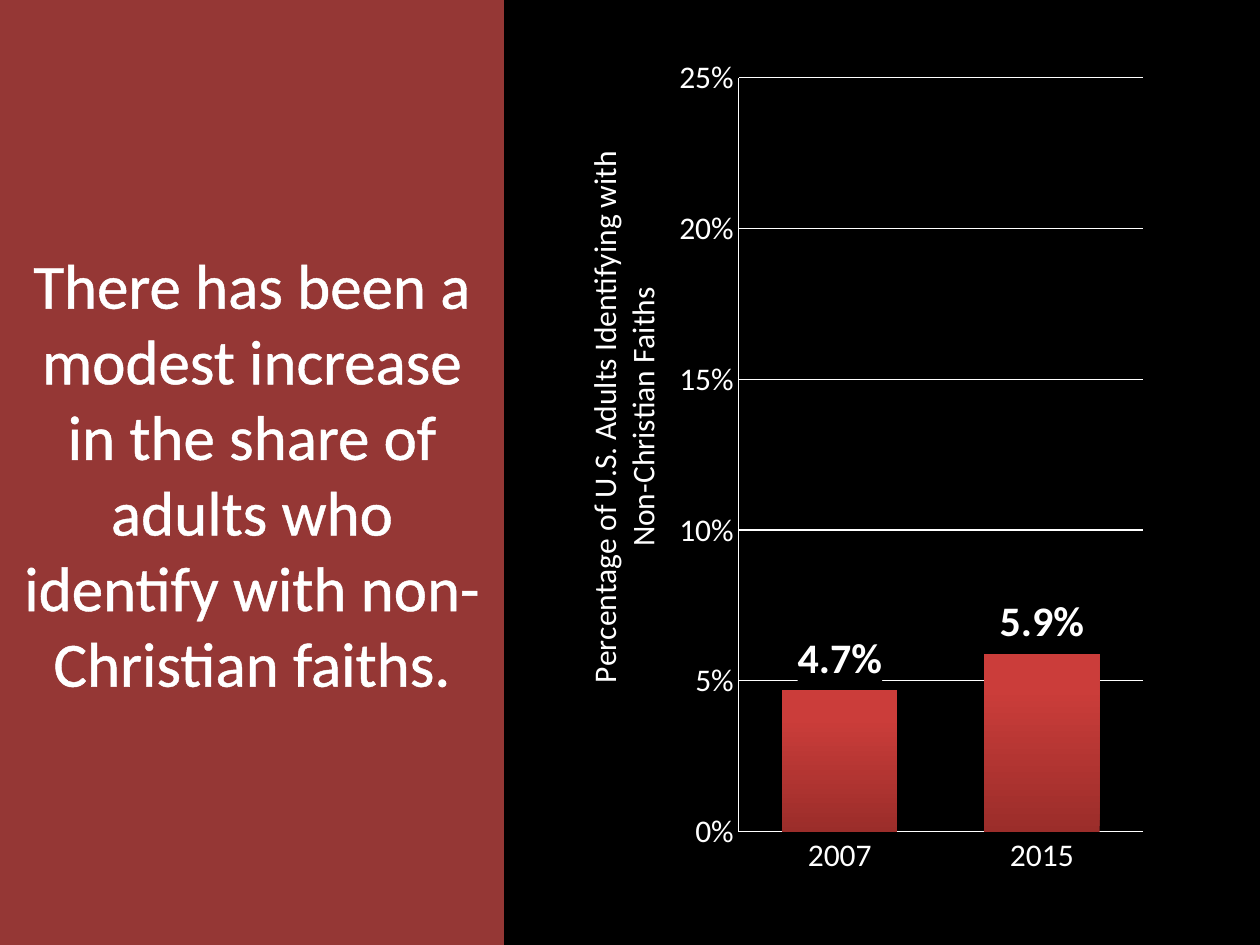
from dataclasses import dataclass

from lxml import etree
from pptx import Presentation
from pptx.chart import data as chart_data
from pptx.dml import color
from pptx.enum import chart as chart_enum
from pptx.enum import text
from pptx.oxml import ns
from pptx.util import Pt

EMU_PER_PX = 914400 / 126
FONT = "Calibri"
WHITE = "FFFFFF"
BLACK = "000000"
PANEL_RED = "953735"


@dataclass(frozen=True)
class Box:
    left: int
    top: int
    width: int
    height: int


@dataclass(frozen=True)
class Share:
    year: str
    value: float


SLIDE = Box(0, 0, 1260, 945)
PANEL = Box(0, 0, 504, 945)
CHART = Box(557, 42, 598, 850)
PLOT = Box(739, 78, 404, 754)
AXIS_TITLE = Box(580, 147, 0, 0)
SHARES = [Share("2007", 0.047), Share("2015", 0.059)]
BAR_STOPS = [(0, "9B2D2A"), (0.8, "CB3D3A")]


def px(value: int) -> int:
    return round(value * EMU_PER_PX)


def rgb(value: str) -> color.RGBColor:
    return color.RGBColor.from_string(value)


def apply(target, values: dict) -> None:
    for name, value in values.items():
        setattr(target, name, value)


def style_font(font, size: int, bold: bool = False) -> None:
    apply(font, {"name": FONT, "size": Pt(size), "bold": bold})
    font.color.rgb = rgb(WHITE)


def fill_solid(fill, value: str) -> None:
    fill.solid()
    fill.fore_color.rgb = rgb(value)


def style_line(line) -> None:
    fill_solid(line.fill, WHITE)
    line.width = Pt(0.75)


def add_layout(parent, index: int, box: Box, inner: bool = False) -> None:
    for old in parent.findall(ns.qn("c:layout")):
        parent.remove(old)
    layout = etree.Element(ns.qn("c:layout"))
    manual = etree.SubElement(layout, ns.qn("c:manualLayout"))
    entries = [("xMode", "edge"), ("yMode", "edge"),
               ("x", round((box.left - CHART.left) / CHART.width, 3)),
               ("y", round((box.top - CHART.top) / CHART.height, 3))]
    if inner:
        entries = [("layoutTarget", "inner"), *entries,
                   ("w", round(box.width / CHART.width, 3)),
                   ("h", round(box.height / CHART.height, 3))]
    for name, value in entries:
        etree.SubElement(manual, ns.qn(f"c:{name}")).set("val", str(value))
    parent.insert(index, layout)


def place_title(slide) -> None:
    title = slide.shapes.title
    apply(title, {name: px(getattr(PANEL, name)) for name in ("left", "top", "width", "height")})
    fill_solid(title.fill, PANEL_RED)
    frame = title.text_frame
    frame.text = ("There has been a modest increase in the share of adults "
                  "who identify with non-Christian faiths.")
    apply(frame, {"word_wrap": True, "auto_size": text.MSO_AUTO_SIZE.NONE,
                  "vertical_anchor": text.MSO_ANCHOR.MIDDLE})
    paragraph = frame.paragraphs[0]
    paragraph.alignment = text.PP_ALIGN.CENTER
    font = paragraph.runs[0].font
    style_font(font, 36)
    outline = etree.Element(ns.qn("a:ln"), w=str(Pt(1.45)))
    outline_fill = etree.SubElement(outline, ns.qn("a:solidFill"))
    etree.SubElement(outline_fill, ns.qn("a:srgbClr")).set("val", WHITE)
    paragraph.runs[0]._r.get_or_add_rPr().insert(0, outline)


def style_axis(axis) -> None:
    apply(axis, {"major_tick_mark": chart_enum.XL_TICK_MARK.NONE,
                 "minor_tick_mark": chart_enum.XL_TICK_MARK.NONE})
    style_font(axis.tick_labels.font, 18)
    style_line(axis.format.line)


def style_value_axis(axis) -> None:
    style_axis(axis)
    apply(axis, {"minimum_scale": 0, "maximum_scale": 0.25, "major_unit": 0.05,
                 "has_major_gridlines": True})
    apply(axis.tick_labels, {"number_format": "0%", "number_format_is_linked": False})
    style_line(axis.major_gridlines.format.line)
    frame = axis.axis_title.text_frame
    frame.text = "Percentage of U.S. Adults Identifying with\nNon-Christian Faiths"
    for paragraph in frame.paragraphs:
        style_font(paragraph.font, 18)
        style_font(paragraph.runs[0].font, 18)
    add_layout(axis.axis_title._element, 1, AXIS_TITLE)


def style_bars(plot) -> None:
    apply(plot, {"gap_width": 75, "overlap": -25, "vary_by_categories": False})
    series = plot.series[0]
    series.format.fill.gradient()
    series.format.fill.gradient_angle = 90
    for stop, (position, value) in zip(series.format.fill.gradient_stops, BAR_STOPS):
        stop.position = position
        stop.color.rgb = rgb(value)
    labels = series.data_labels
    apply(labels, {"show_value": True, "number_format": "0.0%",
                   "number_format_is_linked": False,
                   "position": chart_enum.XL_LABEL_POSITION.OUTSIDE_END})
    style_font(labels.font, 24, True)
    properties = etree.Element(ns.qn("c:spPr"))
    label_fill = etree.SubElement(properties, ns.qn("a:solidFill"))
    etree.SubElement(label_fill, ns.qn("a:srgbClr")).set("val", BLACK)
    labels._element.find(ns.qn("c:txPr")).addprevious(properties)


def add_share_chart(slide) -> None:
    shares = chart_data.CategoryChartData(number_format="0.0%")
    shares.categories = [share.year for share in SHARES]
    shares.add_series("Series 1", [share.value for share in SHARES])
    frame = slide.shapes.add_chart(
        chart_enum.XL_CHART_TYPE.COLUMN_CLUSTERED,
        px(CHART.left), px(CHART.top), px(CHART.width), px(CHART.height), shares)
    chart = frame.chart
    apply(chart, {"has_legend": False, "has_title": False})
    style_font(chart.font, 18)
    style_axis(chart.category_axis)
    style_value_axis(chart.value_axis)
    style_bars(chart.plots[0])
    plot_area = chart._chartSpace.find(f".//{ns.qn('c:plotArea')}")
    add_layout(plot_area, 0, PLOT, inner=True)


def main() -> None:
    presentation = Presentation()
    apply(presentation, {"slide_width": px(SLIDE.width), "slide_height": px(SLIDE.height)})
    slide = presentation.slides.add_slide(presentation.slide_layouts[5])
    fill_solid(slide.background.fill, BLACK)
    place_title(slide)
    add_share_chart(slide)
    presentation.save("out.pptx")


if __name__ == "__main__":
    main()
